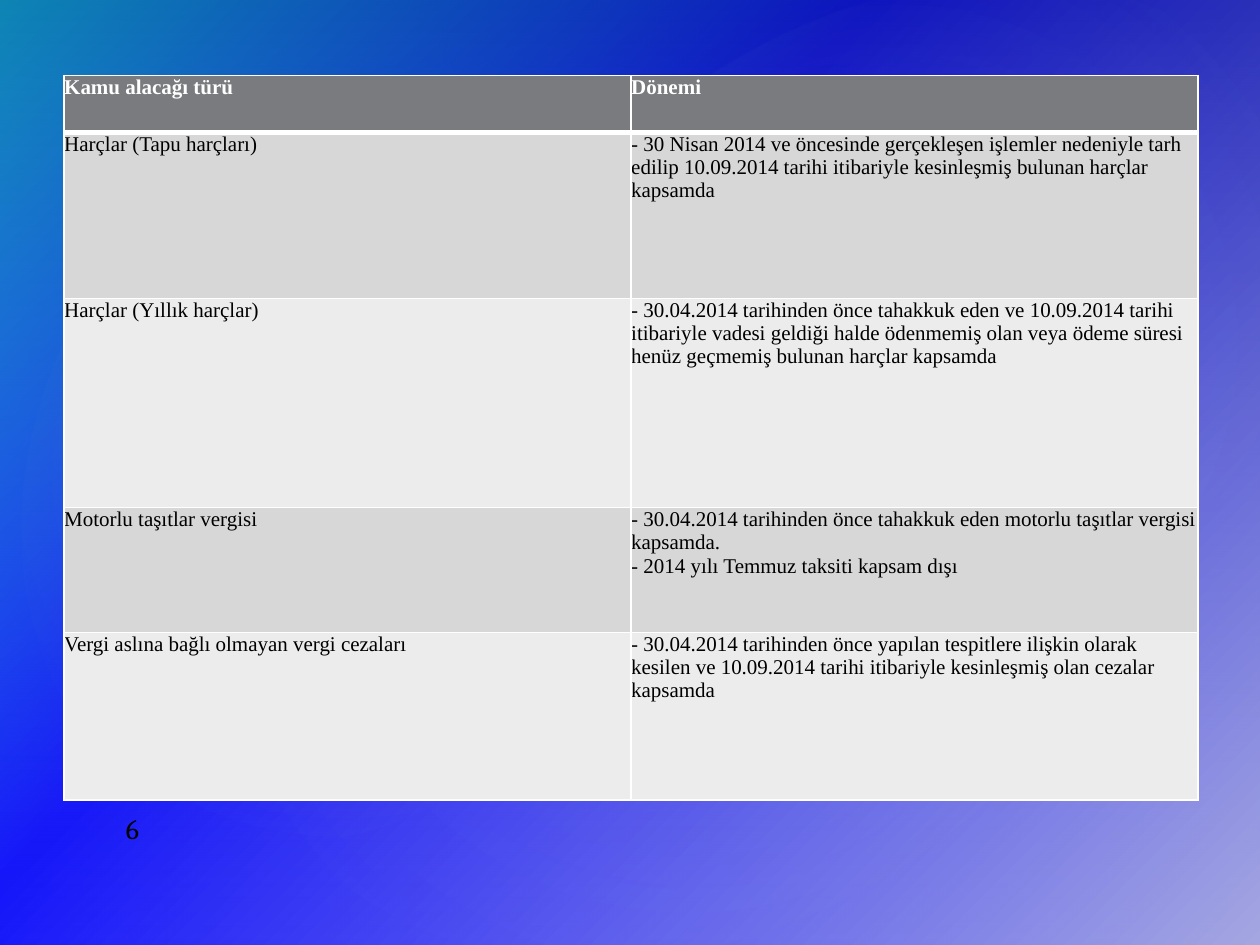
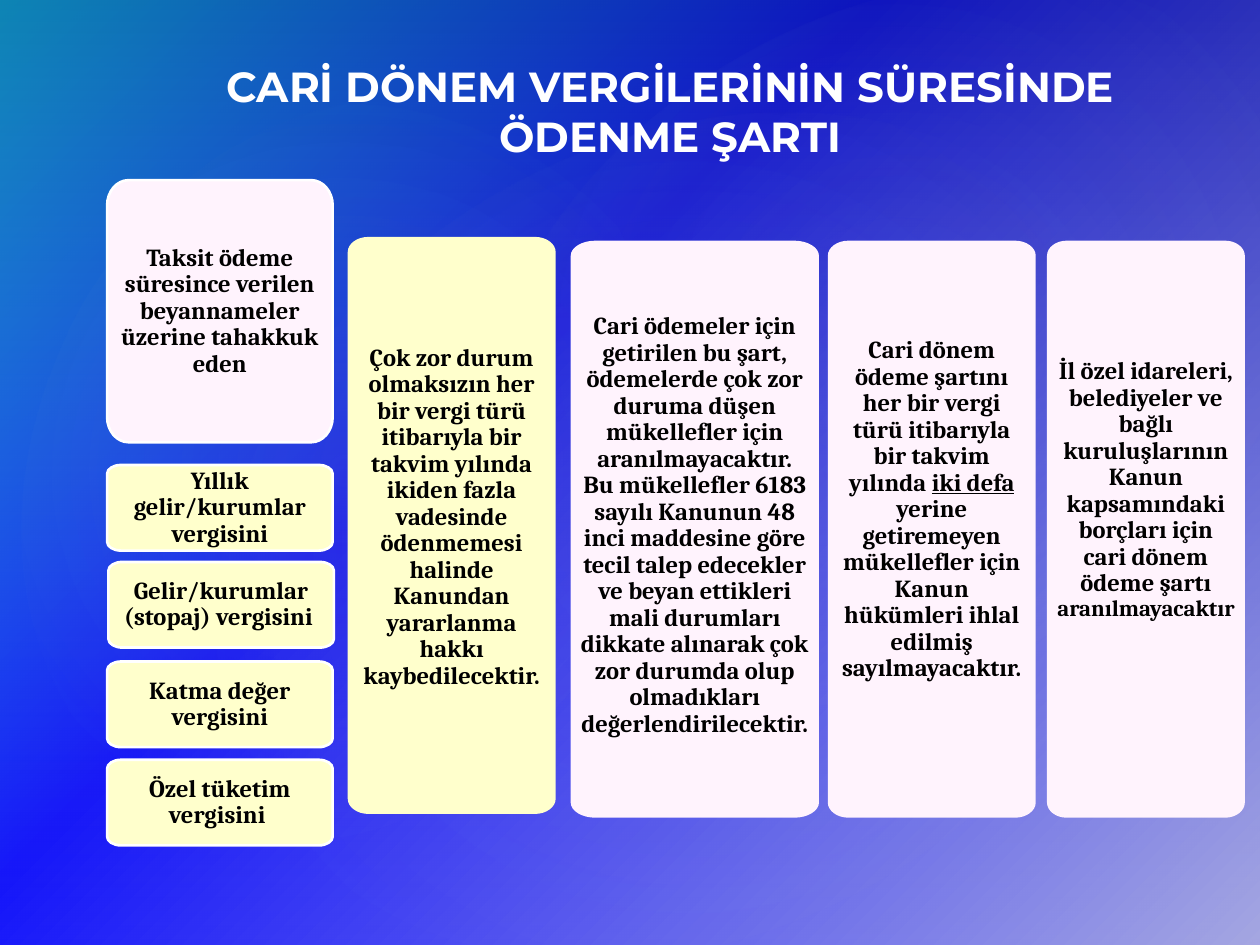
from lxml import etree
from pptx import Presentation
from pptx.dml.color import RGBColor
from pptx.enum.shapes import MSO_SHAPE
from pptx.enum.text import MSO_ANCHOR, MSO_AUTO_SIZE, PP_ALIGN
from pptx.oxml.ns import qn
from pptx.util import Inches, Pt

WHITE, BLACK = "FFFFFF", "000000"
PINK, CREAM = "FFF3FD", "FFFFCC"
HEADER, DARK_ROW, LIGHT_ROW = "797B7E", "D7D7D8", "ECECEC"
BODY, TITLE, TABLE = "Cambria", "Montserrat", "Times New Roman"


def rgb(color):
    return RGBColor.from_string(color)


def put_gradient(parent, stops, angle=None):
    grad = etree.Element(qn("a:gradFill"), rotWithShape="1")
    stop_list = etree.SubElement(grad, qn("a:gsLst"))
    for pos, color, alpha in stops:
        stop = etree.SubElement(stop_list, qn("a:gs"), pos=str(pos * 1000))
        clr = etree.SubElement(stop, qn("a:srgbClr"), val=color)
        if alpha < 100:
            etree.SubElement(clr, qn("a:alpha"), val=str(alpha * 1000))
    if angle is None:
        path = etree.SubElement(grad, qn("a:path"), path="circle")
        etree.SubElement(path, qn("a:fillToRect"), l="50000", t="50000", r="50000", b="50000")
    else:
        etree.SubElement(grad, qn("a:lin"), ang=str(angle * 60000), scaled="0")
    no_fill = next(parent.iter(qn("a:noFill")))
    no_fill.getparent().replace(no_fill, grad)


def set_border(cell, index, side, width):
    ln = etree.Element(qn("a:" + side), w=str(Pt(width)))
    fill = etree.SubElement(ln, qn("a:solidFill"))
    etree.SubElement(fill, qn("a:srgbClr"), val=WHITE)
    cell._tc.get_or_add_tcPr().insert(index, ln)


def round_corners(sp):
    nodes = list(sp._element.iter(qn("a:moveTo"), qn("a:lnTo")))
    points = [(int(n[0].get("x")), int(n[0].get("y"))) for n in nodes]
    for i in range(1, len(nodes), 2):
        (ax, ay), (bx, by) = points[i - 1], points[i]
        cx, cy = (ax, by) if i % 4 == 1 else (bx, ay)
        curve = etree.Element(qn("a:cubicBezTo"))
        for x, y in [(ax + (cx - ax) * 0.55, ay + (cy - ay) * 0.55),
                     (bx + (cx - bx) * 0.55, by + (cy - by) * 0.55), (bx, by)]:
            etree.SubElement(curve, qn("a:pt"), x=str(round(x)), y=str(round(y)))
        nodes[i].getparent().replace(nodes[i], curve)


class Deck:
    def __init__(self):
        self.prs = Presentation()
        self.prs.slide_width, self.prs.slide_height = Inches(10), Inches(7.5)
        self.slide = None

    def add_slide(self, layout):
        self.slide = self.prs.slides.add_slide(self.prs.slide_layouts[layout])

    def style(self, p, font, size, color=BLACK, bold=False, align=PP_ALIGN.LEFT):
        p.alignment = align
        p.font.name, p.font.size, p.font.bold = font, Pt(size), bold
        p.font.color.rgb = rgb(color)

    def margins(self, tf, left, top, right, bottom):
        tf.margin_left, tf.margin_top = Inches(left), Inches(top)
        tf.margin_right, tf.margin_bottom = Inches(right), Inches(bottom)

    def backdrop(self):
        master = self.prs.slide_master
        master.background.fill.background()
        put_gradient(master._element.cSld.bg,
                     [(0, "00B0F0", 100), (40, "0000FF", 100), (100, "A0A1E3", 100)], 45)
        veil = [(0, "28374A", 36), (100, "CDD7D9", 10)]
        faint, glow = ([(0, "91A7C4", a), (58, "CDD7D9", 0)] for a in (7, 8))
        layers = [
            (MSO_SHAPE.RECTANGLE, (0, 0, 10, 7.5), 0, veil, 90),
            (MSO_SHAPE.OVAL, (1.5, 1.14, 7.92, 6.24), 328.7, faint, None),
            (MSO_SHAPE.OVAL, (-0.3, 1.28, 6.06, 4.9), 294.3, glow, None),
            (MSO_SHAPE.OVAL, (3.58, 0.13, 7.09, 5.2), 328.7, glow, None),
        ]
        for i, (kind, box, rotation, stops, angle) in enumerate(layers):
            sp = self.slide.shapes.add_shape(kind, *map(Inches, box))
            sp.rotation = rotation
            sp.shadow.inherit = False
            sp.line.fill.background()
            sp.fill.background()
            put_gradient(sp._element.spPr, stops, angle)
            sp._element.nvSpPr.cNvPr.set("id", str(20 + i))
            master.shapes._spTree.insert(2 + i, sp._element)

    def title(self, text):
        sp = self.slide.shapes.title
        sp.left, sp.top, sp.width, sp.height = map(Inches, (1.22, 0.54, 7.95, 0.79))
        tf = sp.text_frame
        tf.text = text
        tf.word_wrap, tf.auto_size = True, MSO_AUTO_SIZE.NONE
        tf.vertical_anchor = MSO_ANCHOR.BOTTOM
        self.margins(tf, 0.35, 0.05, 0.1, 0.05)
        self.style(tf.paragraphs[0], TITLE, 24, WHITE, True, PP_ALIGN.CENTER)

    def page_number(self, number):
        sp = self.slide.shapes.add_textbox(*map(Inches, (0.9, 6.39, 2.33, 0.33)))
        tf = sp.text_frame
        tf.text = number
        tf.word_wrap = True
        tf.vertical_anchor = MSO_ANCHOR.BOTTOM
        self.margins(tf, 0.1, 0.05, 0.1, 0.01)
        self.style(tf.paragraphs[0], BODY, 16)

    def table(self, rows, heights):
        frame = self.slide.shapes.add_table(
            len(rows), 2, Inches(0.51), Inches(0.6), Inches(9), Inches(sum(heights)))
        tbl = frame.table
        for i, (row, height) in enumerate(zip(rows, heights)):
            tbl.rows[i].height = Inches(height)
            fill = HEADER if i == 0 else DARK_ROW if i % 2 else LIGHT_ROW
            for j, text in enumerate(row):
                cell = tbl.cell(i, j)
                cell.text = text
                self.margins(cell, 0, 0, 0, 0)
                cell.fill.solid()
                cell.fill.fore_color.rgb = rgb(fill)
                widths = {"lnL": 1, "lnR": 1, "lnT": 3 if i == 1 else 1, "lnB": 3 if i == 0 else 1}
                for k, (side, width) in enumerate(widths.items()):
                    set_border(cell, k, side, width)
                for p in cell.text_frame.paragraphs:
                    self.style(p, TABLE, 12, BLACK if i else WHITE, i == 0)

    def card(self, box, radii, color, runs, inset, bottom=None, outlined=False):
        x, y, w, h = map(Inches, box)
        rx, ry = map(Inches, radii)
        right, base = x + w, y + h
        builder = self.slide.shapes.build_freeform(x, y + ry)
        builder.add_line_segments([
            (x + rx, y), (right - rx, y), (right, y + ry), (right, base - ry),
            (right - rx, base), (x + rx, base), (x, base - ry)], close=True)
        sp = builder.convert_to_shape()
        round_corners(sp)
        sp.shadow.inherit = False
        sp.fill.solid()
        sp.fill.fore_color.rgb = rgb(color)
        if outlined:
            sp.line.color.rgb = rgb(WHITE)
            sp.line.width = Pt(1.5)
        else:
            sp.line.fill.background()
        tf = sp.text_frame
        tf.word_wrap = True
        tf.vertical_anchor = MSO_ANCHOR.MIDDLE
        self.margins(tf, inset, inset, inset, inset if bottom is None else bottom)
        p = tf.paragraphs[0]
        self.style(p, BODY, 14, BLACK, True, PP_ALIGN.CENTER)
        p.line_spacing = 0.9
        for text, size, underline in runs:
            r = p.add_run()
            r.text = text
            if size:
                r.font.size = Pt(size)
            if underline:
                r.font.underline = True


def plain(text):
    return [(text, None, False)]


def period_slide(deck):
    deck.add_slide(6)
    deck.backdrop()
    deck.page_number("6")
    deck.table([
        ("Kamu alacağı türü", "Dönemi"),
        ("Harçlar (Tapu harçları)",
         "- 30 Nisan 2014 ve öncesinde gerçekleşen işlemler nedeniyle tarh edilip "
         "10.09.2014 tarihi itibariyle kesinleşmiş bulunan harçlar kapsamda"),
        ("Harçlar (Yıllık harçlar)",
         "- 30.04.2014 tarihinden önce tahakkuk eden ve 10.09.2014 tarihi itibariyle vadesi "
         "geldiği halde ödenmemiş olan veya ödeme süresi henüz geçmemiş bulunan harçlar kapsamda"),
        ("Motorlu taşıtlar vergisi",
         "- 30.04.2014 tarihinden önce tahakkuk eden motorlu taşıtlar vergisi kapsamda.\n"
         "- 2014 yılı Temmuz taksiti kapsam dışı"),
        ("Vergi aslına bağlı olmayan vergi cezaları",
         "- 30.04.2014 tarihinden önce yapılan tespitlere ilişkin olarak kesilen ve "
         "10.09.2014 tarihi itibariyle kesinleşmiş olan cezalar kapsamda"),
    ], [0.45, 1.32, 1.66, 0.99, 1.33])


def condition_slide(deck):
    deck.add_slide(5)
    deck.title("CARİ DÖNEM VERGİLERİNİN SÜRESİNDE ÖDENME ŞARTI")

    columns = [
        (8.31, 1.91, 1.57, PINK, 0.69, [
            ("İl özel idareleri, belediyeler ve bağlı kuruluşlarının Kanun kapsamındaki "
             "borçları için cari dönem ödeme şartı ", None, False),
            ("aranılmayacaktır", 13, False)]),
        (6.57, 1.91, 1.65, PINK, 0.38, [
            ("Cari dönem ödeme şartını her bir vergi türü itibarıyla bir takvim yılında ",
             None, False),
            ("iki defa ", None, True),
            ("yerine getiremeyen mükellefler için Kanun hükümleri ihlal edilmiş "
             "sayılmayacaktır.", None, False)]),
        (4.53, 1.91, 1.97, PINK, 0.13, plain(
            "Cari ödemeler için getirilen bu şart, ödemelerde çok zor duruma düşen mükellefler "
            "için aranılmayacaktır. Bu mükellefler 6183 sayılı Kanunun 48 inci maddesine göre "
            "tecil talep edecekler ve beyan ettikleri mali durumları dikkate alınarak çok zor "
            "durumda olup olmadıkları değerlendirilecektir.")),
        (2.76, 1.88, 1.65, CREAM, 0.2, plain(
            "Çok zor durum olmaksızın her bir vergi türü itibarıyla bir takvim yılında ikiden "
            "fazla vadesinde ödenmemesi halinde Kanundan yararlanma hakkı kaybedilecektir.")),
    ]
    for left, top, width, color, bottom, runs in columns:
        deck.card((left, top, width, 4.58), (width / 10, 0.12), color, runs, 0.07, bottom)

    deck.card((0.85, 1.43, 1.79, 2.08), (0.17, 0.2), PINK, plain(
        "Taksit ödeme süresince verilen beyannameler üzerine tahakkuk eden"),
        0.07, outlined=True)
    taxes = [(0.85, 3.69, "Yıllık gelir/kurumlar vergisini"),
             (0.86, 4.46, "Gelir/kurumlar (stopaj) vergisini "),
             (0.85, 5.25, "Katma değer vergisini"),
             (0.85, 6.03, "Özel tüketim vergisini ")]
    for left, top, tax in taxes:
        deck.card((left, top, 1.79, 0.68), (0.11, 0.07), CREAM, plain(tax), 0.03, outlined=True)


def main():
    deck = Deck()
    period_slide(deck)
    condition_slide(deck)
    deck.prs.save("out.pptx")


if __name__ == "__main__":
    main()
